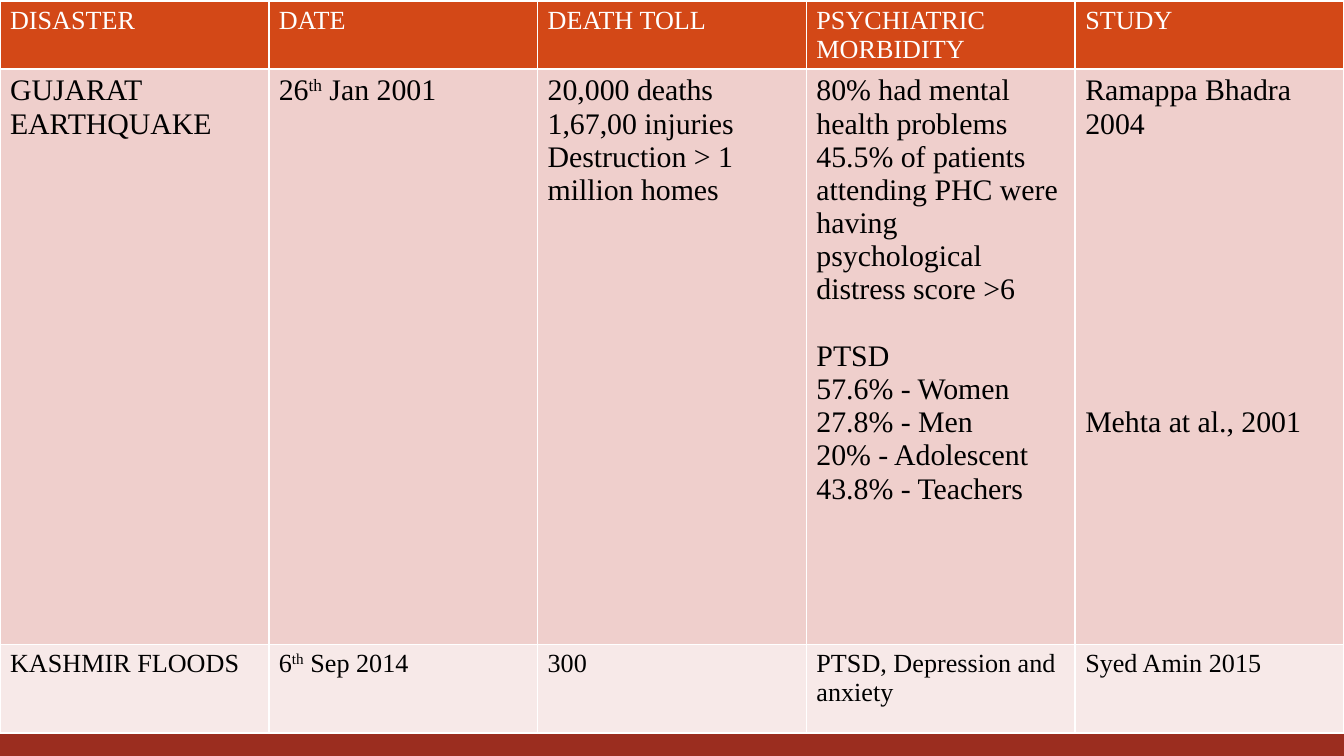
from pptx import Presentation
from pptx.dml.color import RGBColor
from pptx.enum.shapes import MSO_SHAPE
from pptx.util import Inches, Pt

RECTANGLE = MSO_SHAPE.RECTANGLE
FONT = "Times New Roman"
LINE_HEIGHT = 1.11
COLORS = {
    "white": "FFFFFF",
    "black": "000000",
    "header": "D34817",
    "body": "EFCFCC",
    "body_light": "F7E9E8",
    "footer": "9B2D1F",
}
ROW_STYLES = [
    {"height": 0.48, "size": 14, "fill": "header", "text": "white"},
    {"height": 4.28, "size": 16, "fill": "body", "text": "black"},
    {"height": 0.66, "size": 14, "fill": "body_light", "text": "black"},
]
HEADINGS = ["DISASTER", "DATE", "DEATH TOLL", "PSYCHIATRIC MORBIDITY", "STUDY"]
ROWS = [
    [[(0, [heading])] for heading in HEADINGS],
    [
        [(0, ["GUJARAT EARTHQUAKE"])],
        [(0, ["26", "^th", " Jan 2001"])],
        [(0, ["20,000 deaths"]), (0, ["1,67,00 injuries"]),
         (0, ["Destruction > 1 million homes"])],
        [(0, ["80% had mental health problems 45.5% of patients attending PHC "
              "were having psychological distress score >6"]),
         (1, ["PTSD"]), (0, ["57.6% - Women"]), (0, ["27.8% - Men"]),
         (0, ["20% - Adolescent"]), (0, ["43.8% - Teachers"])],
        [(0, ["Ramappa Bhadra 2004"]), (8, ["Mehta at al., 2001"])],
    ],
    [
        [(0, ["KASHMIR FLOODS"])],
        [(0, ["6", "^th", " Sep 2014"])],
        [(0, ["300"])],
        [(0, ["PTSD, Depression and anxiety"])],
        [(0, ["Syed Amin 2015"])],
    ],
]


def color(name):
    """Return the named palette colour."""
    return RGBColor.from_string(COLORS[name])


def write_cell(cell, paragraphs, style):
    """Write (gap lines, runs) paragraphs, where a run starting with ^ is superscript."""
    cell.fill.solid()
    cell.fill.fore_color.rgb = color(style["fill"])
    cell.margin_left = cell.margin_right = Pt(5.4)
    cell.margin_top = cell.margin_bottom = Pt(2.7)
    frame = cell.text_frame
    for index, (gap_lines, runs) in enumerate(paragraphs):
        paragraph = frame.add_paragraph() if index else frame.paragraphs[0]
        if gap_lines:
            paragraph.space_before = Pt(gap_lines * style["size"] * LINE_HEIGHT)
        paragraph.font.name = FONT
        paragraph.font.size = Pt(style["size"])
        paragraph.font.bold = False
        paragraph.font.color.rgb = color(style["text"])
        for text in runs:
            run = paragraph.add_run()
            run.text = text.removeprefix("^")
            if text.startswith("^"):
                run._r.get_or_add_rPr().set("baseline", "30000")


def add_disaster_table(slide, left, top, width):
    """Place the disaster table with equal columns."""
    height = sum(style["height"] for style in ROW_STYLES)
    table = slide.shapes.add_table(
        len(ROWS), len(HEADINGS), Inches(left), Inches(top), Inches(width), Inches(height)
    ).table
    for row_index, (row, style) in enumerate(zip(ROWS, ROW_STYLES)):
        table.rows[row_index].height = Inches(style["height"])
        for column_index, paragraphs in enumerate(row):
            write_cell(table.cell(row_index, column_index), paragraphs, style)


def add_footer_bar(slide, left, top, width, height):
    """Place the dark bar along the bottom edge."""
    bar = slide.shapes.add_shape(
        RECTANGLE, Inches(left), Inches(top), Inches(width), Inches(height)
    )
    bar.shadow.inherit = False
    bar.fill.solid()
    bar.fill.fore_color.rgb = color("footer")
    bar.line.fill.background()


def main():
    """Build and save the presentation."""
    presentation = Presentation()
    presentation.slide_width = Inches(10)
    presentation.slide_height = Inches(10 * 9 / 16)
    slide = presentation.slides.add_slide(presentation.slide_layouts[6])
    add_footer_bar(slide, 0, 5.25, 10, 0.38)
    add_disaster_table(slide, 0, 0.01, 10)
    presentation.save("out.pptx")


if __name__ == "__main__":
    main()
